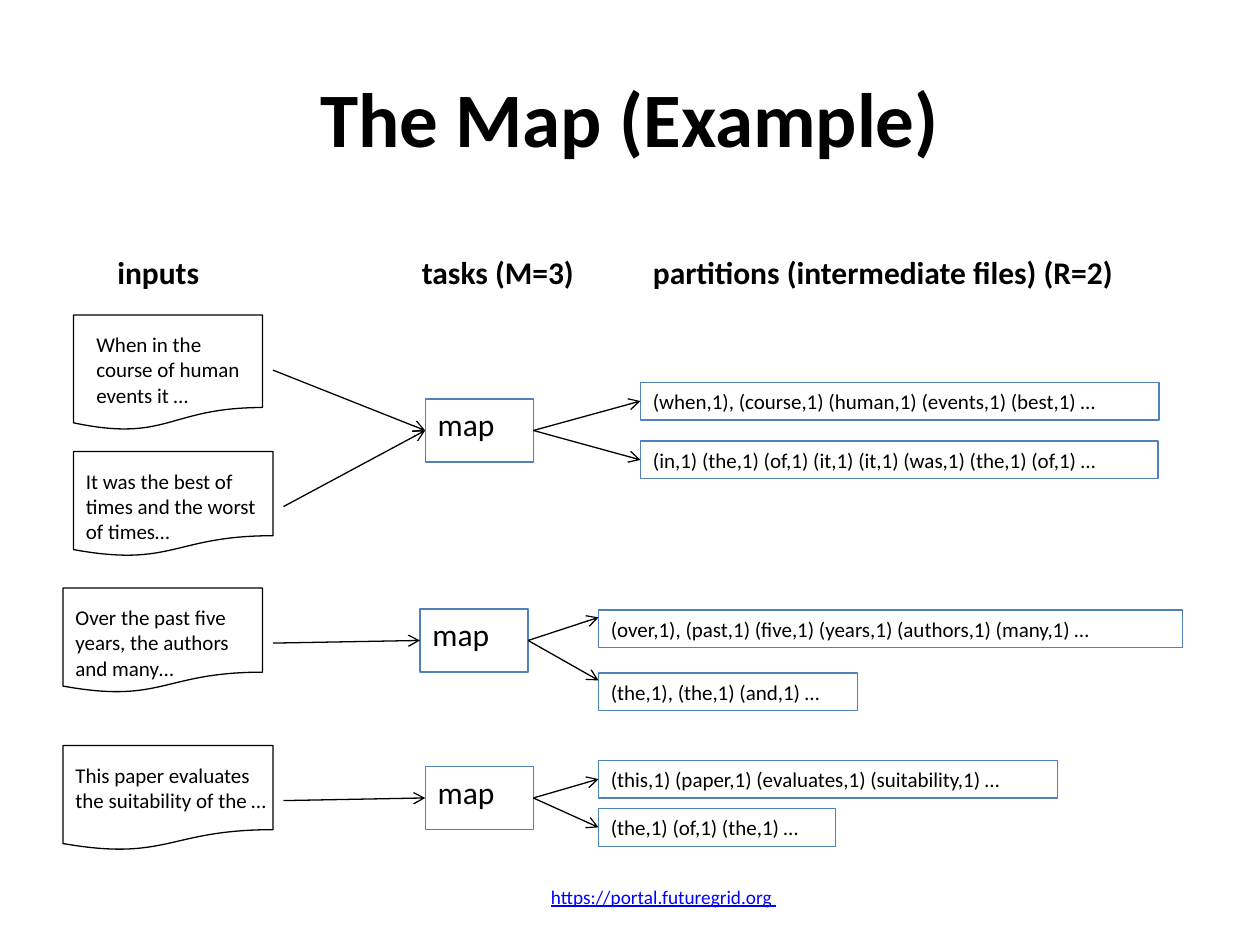
from dataclasses import dataclass
from typing import Any

from lxml import etree
from pptx import Presentation
from pptx.dml.color import RGBColor
from pptx.enum.shapes import MSO_CONNECTOR, MSO_SHAPE
from pptx.enum.text import MSO_ANCHOR, PP_ALIGN
from pptx.oxml.ns import qn
from pptx.util import Inches, Pt

DOCUMENT = MSO_SHAPE.FLOWCHART_DOCUMENT
RECTANGLE = MSO_SHAPE.RECTANGLE
STRAIGHT = MSO_CONNECTOR.STRAIGHT
TOP, MIDDLE = MSO_ANCHOR.TOP, MSO_ANCHOR.MIDDLE
LEFT, CENTER = PP_ALIGN.LEFT, PP_ALIGN.CENTER

CELLS_PER_INCH = 12
MAP_WIDTH, MAP_HEIGHT = 10.3, 6
PARTITION_HEIGHT = 3.6
INPUT_TEXT_HEIGHT = 8.5


def grid(cells):
    return Inches(cells / CELLS_PER_INCH)


def color(hex_string):
    return RGBColor.from_string(hex_string)


@dataclass
class Diagram:
    slide: Any
    font: str = "Calibri"
    ink: str = "000000"
    accent: str = "4F81BD"
    link: str = "0000FF"
    line_width: float = 0.75

    def add_text(self, shape, text, size, bold=False, underline=False,
                 ink=None, align=LEFT, anchor=TOP):
        frame = shape.text_frame
        frame.word_wrap = True
        frame.vertical_anchor = anchor
        paragraph = frame.paragraphs[0]
        paragraph.alignment = align
        run = paragraph.add_run()
        run.text = text
        run.font.name = self.font
        run.font.size = Pt(size)
        run.font.bold = bold
        run.font.underline = underline
        run.font.color.rgb = color(ink or self.ink)

    def label(self, column, row, columns, rows, text, size, **style):
        shape = self.slide.shapes.add_textbox(
            grid(column), grid(row), grid(columns), grid(rows))
        self.add_text(shape, text, size, **style)

    def outline(self, kind, column, row, columns, rows, line):
        shape = self.slide.shapes.add_shape(
            kind, grid(column), grid(row), grid(columns), grid(rows))
        shape.shadow.inherit = False
        shape.fill.background()
        shape.line.color.rgb = color(line)
        shape.line.width = Pt(self.line_width)
        return shape

    def box(self, column, row, columns, rows, text, size):
        shape = self.outline(RECTANGLE, column, row, columns, rows, self.accent)
        self.add_text(shape, text, size)

    def arrow(self, start, end):
        connector = self.slide.shapes.add_connector(
            STRAIGHT, *(grid(cells) for cells in (*start, *end)))
        connector.line.color.rgb = color(self.ink)
        connector.line.width = Pt(self.line_width)
        properties = connector._element.spPr
        etree.SubElement(properties.find(qn("a:ln")), qn("a:tailEnd"), type="arrow")
        etree.SubElement(properties, qn("a:effectLst"))

    def source(self, document, text_column, text_columns, text, target):
        self.outline(DOCUMENT, *document, self.ink)
        text_row = document[1] + 1
        self.label(text_column, text_row, text_columns, INPUT_TEXT_HEIGHT, text, 12)
        start = (text_column + text_columns, text_row + INPUT_TEXT_HEIGHT / 2)
        self.arrow(start, target)

    def task(self, column, row, sources, partition_column, arrow_drop, partitions):
        middle = row + MAP_HEIGHT / 2
        self.box(column, row, MAP_WIDTH, MAP_HEIGHT, "map", 18)
        for entry in sources:
            self.source(*entry, target=(column, middle))
        for partition_row, columns, text in partitions:
            self.box(partition_column, partition_row, columns,
                     PARTITION_HEIGHT, text, 12)
            self.arrow((column + MAP_WIDTH, middle),
                       (partition_column, partition_row + arrow_drop))


HEADINGS = [
    (10, 11.5, "inputs"),
    (39, 19.6, "tasks (M=3)"),
    (61, 52.7, "partitions (intermediate files) (R=2)"),
]

TASKS = [
    (40.5, 38,
     [((7, 30, 18, 11), 8, 18, "When in the course of human events it …"),
      ((7, 43, 19, 10), 7, 20, "It was the best of times and the worst of times…")],
     61, PARTITION_HEIGHT / 2,
     [(36.4, 49.4, "(when,1), (course,1) (human,1) (events,1) (best,1) …"),
      (42, 49.3, "(in,1) (the,1) (of,1) (it,1) (it,1) (was,1) (the,1) (of,1) …")]),
    (40, 58,
     [((6, 56, 19, 10), 6, 20, "Over the past five years, the authors and many…")],
     57, 0.7,
     [(58.1, 55.6, "(over,1), (past,1) (five,1) (years,1) (authors,1) (many,1) …"),
      (64.1, 24.7, "(the,1), (the,1) (and,1) …")]),
    (40.5, 73,
     [((6, 71, 20, 10), 6, 21, "This paper evaluates the suitability of the …")],
     57, PARTITION_HEIGHT / 2,
     [(72.4, 43.7, "(this,1) (paper,1) (evaluates,1) (suitability,1) …"),
      (77, 22.6, "(the,1) (of,1) (the,1) …")]),
]


def main():
    presentation = Presentation()
    presentation.slide_width = Inches(10)
    presentation.slide_height = Inches(7.5)
    diagram = Diagram(presentation.slides.add_slide(presentation.slide_layouts[6]))

    diagram.label(6, 3.6, 108, 15, "The Map (Example)", 44,
                  bold=True, align=CENTER, anchor=MIDDLE)
    for column, columns, text in HEADINGS:
        diagram.label(column, 23.5, columns, 4.8, text, 18, bold=True)
    for task in TASKS:
        diagram.task(*task)
    diagram.label(41.3, 83, 43.8, 4.8, "https://portal.futuregrid.org ", 11,
                  underline=True, ink=diagram.link, align=CENTER, anchor=MIDDLE)

    presentation.save("out.pptx")


if __name__ == "__main__":
    main()
